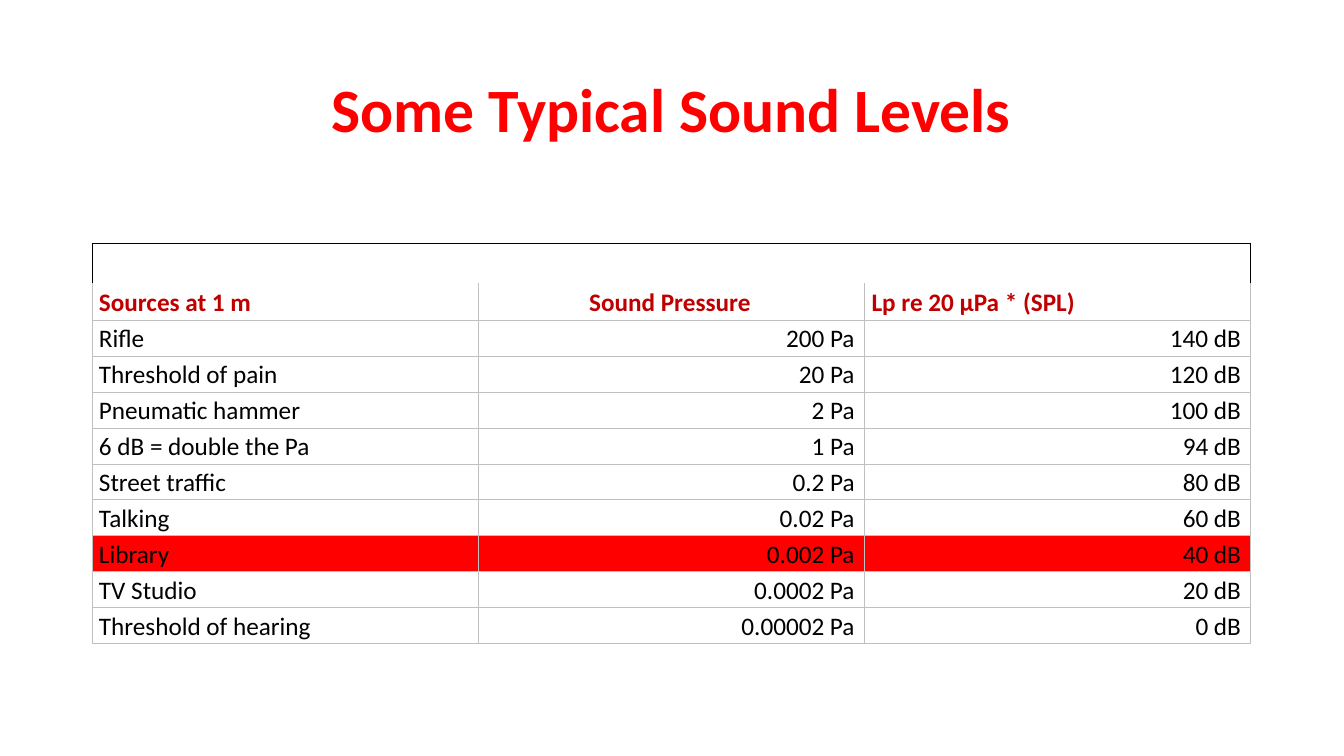
"""Build a slide with a table of typical sound levels."""
from lxml import etree
from pptx import Presentation
from pptx.dml.color import RGBColor
from pptx.enum.text import MSO_ANCHOR, PP_ALIGN
from pptx.oxml.ns import qn
from pptx.util import Emu, Pt

LEFT, CENTER, RIGHT = PP_ALIGN.LEFT, PP_ALIGN.CENTER, PP_ALIGN.RIGHT
MIDDLE = MSO_ANCHOR.MIDDLE
COLORS = {"accent": "FF0000", "heading": "C00000", "text": "000000",
          "grid": "C0C0C0", "frame": "000000"}
HEADINGS = ("Sources at 1 m", "Sound Pressure", "Lp re 20 µPa * (SPL)")
LEVELS = (
    ("Rifle", "200 Pa", "140 dB"),
    ("Threshold of pain", "20 Pa", "120 dB"),
    ("Pneumatic hammer", "2 Pa", "100 dB"),
    ("6 dB = double the Pa", "1 Pa", "94 dB"),
    ("Street traffic", "0.2 Pa", "80 dB"),
    ("Talking", "0.02 Pa", "60 dB"),
    ("Library", "0.002 Pa", "40 dB"),
    ("TV Studio", "0.0002 Pa", "20 dB"),
    ("Threshold of hearing", "0.00002 Pa", "0 dB"),
)
HIGHLIGHT = "Library"


def px(length):
    """Turn pixels into EMU."""
    return Emu(round(length * 914400 / 100.8))


class SlideBuilder:
    """Hold the style and the current slide."""

    font = "Calibri"
    body_size = 18
    title_size = 44

    def __init__(self, presentation):
        self.slide = presentation.slides.add_slide(presentation.slide_layouts[6])

    def style(self, paragraph, size, color, bold, align):
        """Format a paragraph and its runs."""
        paragraph.alignment = align
        for run in paragraph.runs:
            run.font.name = self.font
            run.font.size = Pt(size)
            run.font.bold = bold
            run.font.color.rgb = RGBColor.from_string(COLORS[color])

    def title(self, wording, left, top, width, height):
        """Add the centred slide title."""
        frame = self.slide.shapes.add_textbox(
            px(left), px(top), px(width), px(height)).text_frame
        frame.word_wrap = True
        frame.vertical_anchor = MIDDLE
        frame.text = wording
        frame.paragraphs[0].line_spacing = 0.9
        self.style(frame.paragraphs[0], self.title_size, "accent", True, CENTER)

    def borders(self, cell, color, sides):
        """Draw thin lines on the given sides of a cell."""
        properties = cell._tc.get_or_add_tcPr()
        for side in sides:
            line = etree.SubElement(properties, qn(f"a:ln{side}"), w=str(Pt(0.75)))
            fill = etree.SubElement(line, qn("a:solidFill"))
            etree.SubElement(fill, qn("a:srgbClr"), val=COLORS[color])

    def cell(self, cell, wording, color, bold, align, sides, fill=None):
        """Fill in one cell of the table."""
        cell.margin_left, cell.margin_top = px(7), px(3)
        cell.margin_right, cell.margin_bottom = px(10), px(2)
        cell.vertical_anchor = MIDDLE
        cell.text = wording
        self.style(cell.text_frame.paragraphs[0], self.body_size, color, bold, align)
        self.borders(cell, "grid", sides)
        if fill:
            cell.fill.solid()
            cell.fill.fore_color.rgb = RGBColor.from_string(COLORS[fill])
        else:
            cell.fill.background()

    def levels_table(self, left, top, width, band_height, row_height):
        """Add the table with its empty band, headings and levels."""
        row_count = len(LEVELS) + 2
        table = self.slide.shapes.add_table(
            row_count, len(HEADINGS), px(left), px(top), px(width),
            px(band_height + row_height * (row_count - 1))).table
        table.first_row = table.horz_banding = False
        for row in table.rows:
            row.height = px(row_height)
        table.rows[0].height = px(band_height)
        for column in range(len(HEADINGS)):
            band = table.cell(0, column)
            self.borders(band, "frame", "LRTB")
            band.fill.background()
        table.cell(0, 0).merge(table.cell(0, len(HEADINGS) - 1))
        for column, heading in enumerate(HEADINGS):
            self.cell(table.cell(1, column), heading, "heading", True,
                      CENTER if column == 1 else LEFT, "LRB")
        for row, level in enumerate(LEVELS, 2):
            fill = "accent" if level[0] == HIGHLIGHT else None
            for column, wording in enumerate(level):
                self.cell(table.cell(row, column), wording, "text", False,
                          RIGHT if column else LEFT, "LRTB", fill)


def main():
    """Build and save the presentation."""
    presentation = Presentation()
    presentation.slide_width, presentation.slide_height = px(1344), px(756)
    builder = SlideBuilder(presentation)
    builder.title("Some Typical Sound Levels", 92, 40, 1159, 146)
    builder.levels_table(92, 243, 1159, 41, 36)
    presentation.save("out.pptx")


if __name__ == "__main__":
    main()
